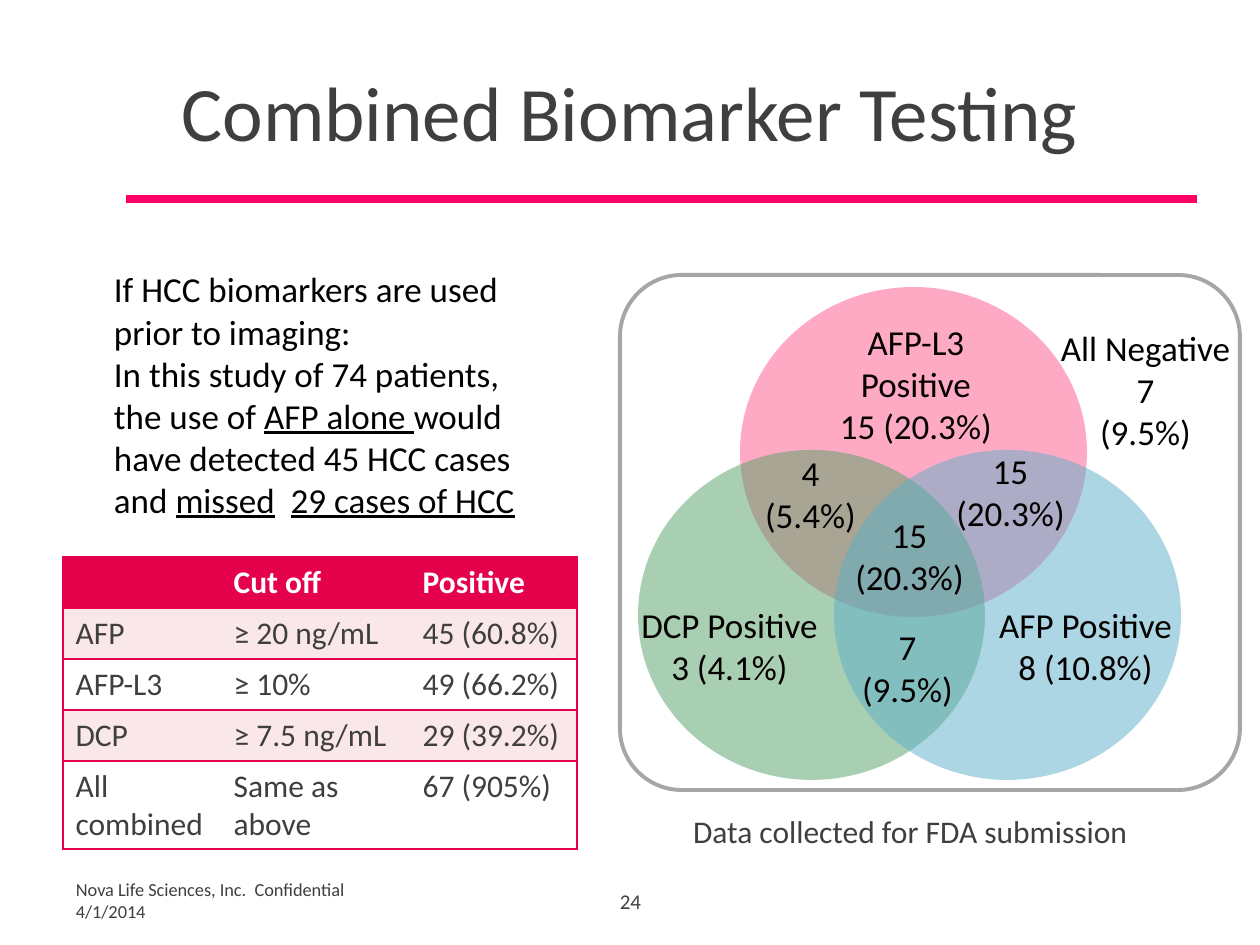
from lxml import etree
from pptx import Presentation
from pptx.dml.color import RGBColor
from pptx.enum.shapes import MSO_CONNECTOR, MSO_SHAPE
from pptx.enum.text import MSO_ANCHOR, MSO_AUTO_SIZE, PP_ALIGN
from pptx.oxml.ns import qn
from pptx.util import Pt

PX = 914400 / 126
FONT = "Calibri"
GRAY = RGBColor(0x3F, 0x3F, 0x3F)
BLACK = RGBColor(0x04, 0x00, 0x00)
WHITE = RGBColor(0xFF, 0xFF, 0xFF)
FRAME = RGBColor(0xA6, 0xA6, 0xA6)
RULE = RGBColor(0xFF, 0x00, 0x66)
RED = RGBColor(0xE4, 0x00, 0x4B)
BLUSH = RGBColor(0xFA, 0xE7, 0xE9)
PINK = RGBColor(0xFF, 0x56, 0x8D)
GREEN = RGBColor(0x54, 0xA1, 0x67)
BLUE = RGBColor(0x5A, 0xAF, 0xC8)
LEFT, CENTER = PP_ALIGN.LEFT, PP_ALIGN.CENTER
TOP, MIDDLE = MSO_ANCHOR.TOP, MSO_ANCHOR.MIDDLE
FIT = MSO_AUTO_SIZE.SHAPE_TO_FIT_TEXT
OVAL, ROUND = MSO_SHAPE.OVAL, MSO_SHAPE.ROUNDED_RECTANGLE
STRAIGHT = MSO_CONNECTOR.STRAIGHT


def emu(*sizes):
    return [round(size * PX) for size in sizes]


class Deck:
    """Draws styled elements on the current slide."""

    def __init__(self, wide, high):
        self.show = Presentation()
        self.show.slide_width, self.show.slide_height = emu(wide, high)
        self.slide = self.show.slides.add_slide(self.show.slide_layouts[5])
        self.shapes = self.slide.shapes

    def put(self, frame, lines, size, color, align=LEFT, bold=False, space=None):
        for i, line in enumerate(lines):
            para = frame.add_paragraph() if i else frame.paragraphs[0]
            para.alignment = align
            if space:
                para.line_spacing = space
            for text, under in [(line, False)] if isinstance(line, str) else line:
                run = para.add_run()
                run.text = text
                font = run.font
                font.name, font.size, font.bold = FONT, Pt(size), bold
                font.color.rgb = color
                if under:
                    font.underline = True

    def title(self, box, text):
        shape = self.shapes.title
        shape.left, shape.top, shape.width, shape.height = emu(*box)
        shape.text_frame.vertical_anchor = MIDDLE
        self.put(shape.text_frame, [text], 44, GRAY, CENTER)

    def text(self, box, lines, size, color, align=LEFT, anchor=TOP, inset=(13, 6), space=None):
        frame = self.shapes.add_textbox(*emu(*box)).text_frame
        frame.word_wrap = True
        frame.vertical_anchor = anchor
        if anchor == TOP:
            frame.auto_size = FIT
        side, edge = emu(*inset)
        frame.margin_left = frame.margin_right = side
        frame.margin_top = frame.margin_bottom = edge
        self.put(frame, lines, size, color, align, space=space)

    def rule(self, x1, x2, y, color, width):
        line = self.shapes.add_connector(STRAIGHT, *emu(x1, y, x2, y))
        line.line.color.rgb = color
        line.line.width = Pt(width)
        etree.SubElement(line._element.spPr, qn("a:effectLst"))

    def shape(self, kind, box, fill):
        shape = self.shapes.add_shape(kind, *emu(*box))
        shape.shadow.inherit = False
        shape.fill.solid()
        shape.fill.fore_color.rgb = fill
        shape.line.fill.background()
        return shape

    def panel(self, box, round_by):
        shape = self.shape(ROUND, box, WHITE)
        shape.adjustments[0] = round_by
        shape.line.color.rgb = FRAME
        shape.line.width = Pt(2.25)

    def disc(self, box, fill):
        shape = self.shape(OVAL, box, fill)
        tint = shape._element.spPr.find(qn("a:solidFill"))[0]
        etree.SubElement(tint, qn("a:alpha"), val="50000")

    def edge(self, cell, side, drawn):
        line = etree.SubElement(cell._tc.get_or_add_tcPr(), qn("a:ln" + side), w=str(Pt(1)))
        if drawn:
            fill = etree.SubElement(line, qn("a:solidFill"))
            etree.SubElement(fill, qn("a:srgbClr"), val=str(RED))
        else:
            etree.SubElement(line, qn("a:noFill"))

    def table(self, left, top, cols, rows, data):
        box = emu(left, top, sum(cols), sum(rows))
        table = self.shapes.add_table(len(rows), len(cols), *box).table
        table.horz_banding = False
        for col, width in zip(table.columns, emu(*cols)):
            col.width = width
        for r, (row, high) in enumerate(zip(data, emu(*rows))):
            table.rows[r].height = high
            for c, text in enumerate(row):
                cell = table.cell(r, c)
                drawn = {"L": c == 0, "R": c == len(cols) - 1, "T": True, "B": True}
                for side, on in drawn.items():
                    self.edge(cell, side, on)
                cell.fill.solid()
                cell.fill.fore_color.rgb = RED if r == 0 else BLUSH if r % 2 else WHITE
                if text:
                    self.put(cell.text_frame, text.split("\n"), 18,
                             GRAY if r else WHITE, bold=r == 0)


def main():
    deck = Deck(1260, 945)
    deck.title((63, 32, 1134, 157), "Combined Biomarker Testing")
    deck.rule(126, 1197, 199, RULE, 4.5)
    deck.text((63, 876, 315, 48), ["Nova Life Sciences, Inc.  Confidential 4/1/2014"],
              10.5, GRAY, anchor=MIDDLE)
    deck.text((431, 876, 399, 50), ["24"], 12, GRAY, CENTER, MIDDLE)

    deck.panel((620, 275, 620, 515), 0.12)
    for x, y, fill in [(740, 287, PINK), (638, 450, GREEN), (834, 450, BLUE)]:
        deck.disc((x, y, 347, 330), fill)

    labels = [
        (814, 315, 204, ["AFP-L3 Positive", "15 (20.3%)"]),
        (631, 598, 197, ["DCP Positive", "3 (4.1%)"]),
        (987, 598, 197, ["AFP Positive", "8 (10.8%)"]),
        (809, 620, 197, ["7", "(9.5%)"]),
        (811, 508, 197, ["15", "(20.3%)"]),
        (712, 446, 197, ["4", "(5.4%)"]),
        (912, 444, 197, ["15", "(20.3%)"]),
        (1047, 321, 197, ["All Negative", "7", "(9.5%)"]),
    ]
    for x, y, wide, lines in labels:
        deck.text((x, y, wide, 95), lines, 20, BLACK, CENTER, inset=(10, 5))
    deck.text((683, 788, 462, 67), ["Data collected for FDA submission"],
              18, GRAY, inset=(10, 5), space=1.5)

    deck.text((101, 262, 466, 267), [
        "If HCC biomarkers are used prior to imaging:",
        [("In this study of 74 patients, the use of ", False), ("AFP alone ", True),
         ("would have detected 45 HCC cases and ", False), ("missed", True),
         ("  ", False), ("29 cases of HCC", True)],
    ], 20, BLACK)

    deck.table(63, 557, [158, 189, 167], [51, 51, 51, 51, 88], [
        ["", "Cut off", "Positive"],
        ["AFP", "≥ 20 ng/mL", "45 (60.8%)"],
        ["AFP-L3", "≥ 10%", "49 (66.2%)"],
        ["DCP", "≥ 7.5 ng/mL", "29 (39.2%)"],
        ["All\ncombined", "Same as\nabove", "67 (905%)"],
    ])
    deck.show.save("out.pptx")


if __name__ == "__main__":
    main()
